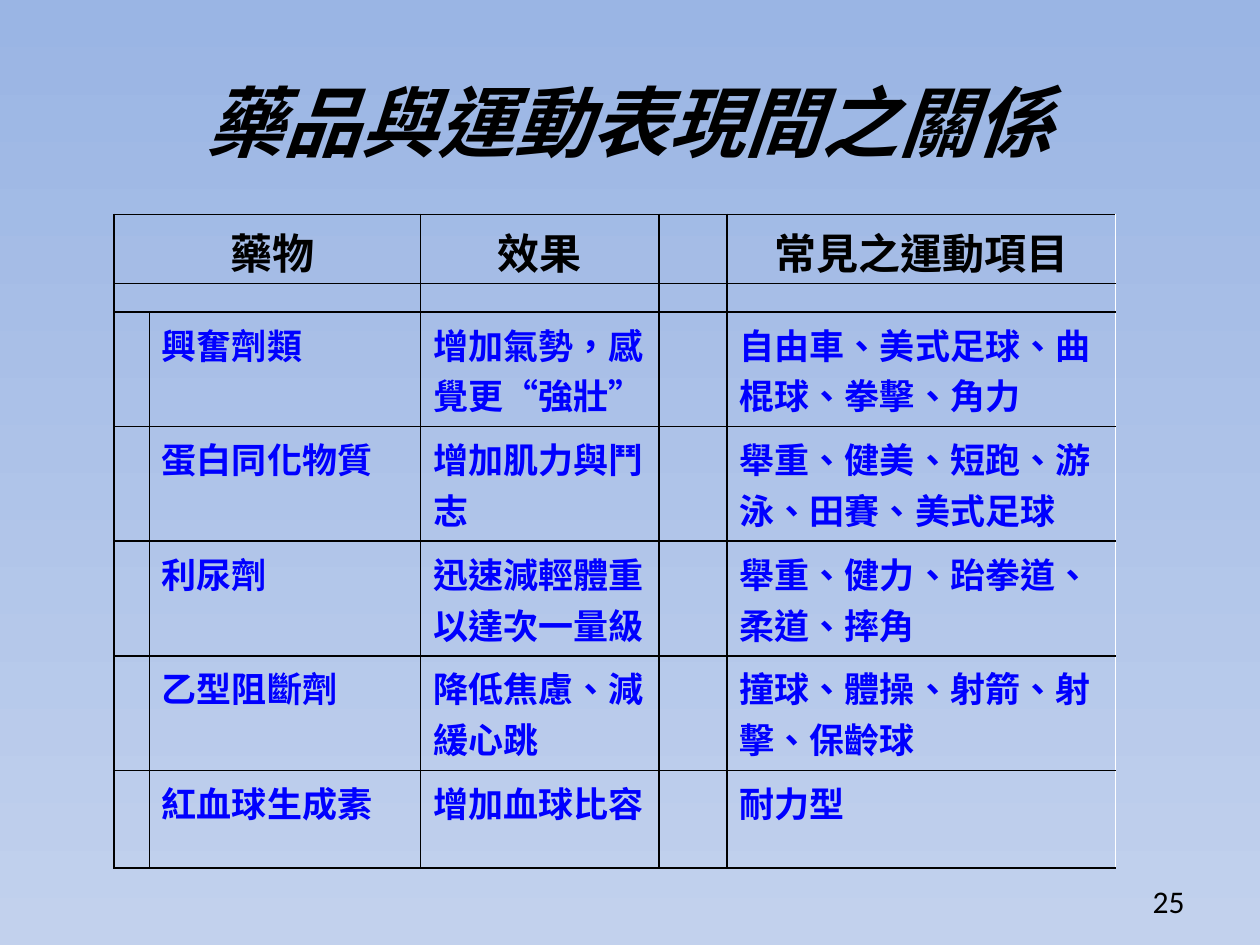
import pptx
import pptx.util
import pptx.dml.color
import pptx.enum.lang
import pptx.enum.shapes
import pptx.enum.text
import pptx.oxml
import pptx.oxml.ns

Cm = pptx.util.Cm
Pt = pptx.util.Pt
RGBColor = pptx.dml.color.RGBColor
ALIGN = pptx.enum.text.PP_ALIGN
ANCHOR = pptx.enum.text.MSO_ANCHOR

BLACK = RGBColor(0x00, 0x00, 0x00)
WHITE = RGBColor(0xFF, 0xFF, 0xFF)
BLUE = RGBColor(0x00, 0x00, 0xFF)
SKY_TOP = RGBColor(0x9A, 0xB5, 0xE4)
SKY_BOTTOM = RGBColor(0xC2, 0xD1, 0xED)
CJK_FONT = "Noto Sans CJK SC"

TABLE_LEFT, TABLE_TOP = 2.3, 4.32
ONE_LINE_ROW, TWO_LINE_ROW = 1.97, 2.31
ROW_HEIGHTS = [ONE_LINE_ROW] + [TWO_LINE_ROW] * 4 + [ONE_LINE_ROW]
COLUMN_WIDTHS = [0.71, 5.47, 4.81, 1.37, 7.83]
DRUG, EFFECT, SPORTS = 1, 2, 4
HEADINGS = [" 藥物", "效果", "常見之運動項目"]
DRUG_ROWS = [
    ("興奮劑類", "增加氣勢，感覺更“強壯”", "自由車、美式足球、曲棍球、拳擊、角力"),
    ("蛋白同化物質", "增加肌力與鬥志", "舉重、健美、短跑、游泳、田賽、美式足球"),
    ("利尿劑", "迅速減輕體重以達次一量級", "舉重、健力、跆拳道、柔道、摔角"),
    ("乙型阻斷劑", "降低焦慮、減緩心跳", "撞球、體操、射箭、射擊、保齡球"),
    ("紅血球生成素", "增加血球比容", "耐力型"),
]


def write_text(frame, text, size=20, font=CJK_FONT, color=BLACK, bold=False,
               italic=False, align=ALIGN.LEFT):
    paragraph = frame.paragraphs[0]
    paragraph.alignment = align
    run = paragraph.add_run()
    run.text = text
    run.font.size = Pt(size)
    run.font.name = font
    run.font.bold = bold
    run.font.italic = italic
    run.font.color.rgb = color
    run.font.language_id = pptx.enum.lang.MSO_LANGUAGE_ID.TRADITIONAL_CHINESE
    latin = run.font._element.find(pptx.oxml.ns.qn("a:latin"))
    latin.addnext(pptx.oxml.parse_xml(
        f'<a:ea {pptx.oxml.ns.nsdecls("a")} typeface="{CJK_FONT}"/>'))


def add_label(slide, left, top, width, height, text, anchor, **text_format):
    frame = slide.shapes.add_textbox(
        Cm(left), Cm(top), Cm(width), Cm(height)).text_frame
    frame.word_wrap = True
    frame.vertical_anchor = anchor
    write_text(frame, text, **text_format)


def set_borders(cell, right_color):
    properties = cell._tc.get_or_add_tcPr()
    colors = {"lnL": BLACK, "lnR": right_color, "lnT": BLACK, "lnB": BLACK}
    for position, (side, color) in enumerate(colors.items()):
        properties.insert(position, pptx.oxml.parse_xml(
            f'<a:{side} {pptx.oxml.ns.nsdecls("a")} w="12700"><a:solidFill>'
            f'<a:srgbClr val="{color}"/></a:solidFill></a:{side}>'))


def add_drug_table(slide):
    table = slide.shapes.add_table(
        len(ROW_HEIGHTS), len(COLUMN_WIDTHS), Cm(TABLE_LEFT), Cm(TABLE_TOP),
        Cm(sum(COLUMN_WIDTHS)), Cm(sum(ROW_HEIGHTS))).table
    table.first_row = False
    table.horz_banding = False
    for column, width in zip(table.columns, COLUMN_WIDTHS):
        column.width = Cm(width)
    for row, height in zip(table.rows, ROW_HEIGHTS):
        row.height = Cm(height)
        for index, cell in enumerate(row.cells):
            cell.fill.background()
            set_borders(cell, WHITE if index == SPORTS else BLACK)
    table.cell(0, 0).merge(table.cell(0, DRUG))
    for column, heading in zip((0, EFFECT, SPORTS), HEADINGS):
        write_text(table.cell(0, column).text_frame, heading, size=24,
                   bold=True, align=ALIGN.CENTER)
    for row, entries in enumerate(DRUG_ROWS, start=1):
        for column, entry in zip((DRUG, EFFECT, SPORTS), entries):
            write_text(table.cell(row, column).text_frame, entry,
                       color=BLUE, bold=True)


def add_heading_rule(slide):
    right = TABLE_LEFT + sum(COLUMN_WIDTHS)
    rule = slide.shapes.add_connector(
        pptx.enum.shapes.MSO_CONNECTOR.STRAIGHT,
        Cm(TABLE_LEFT), Cm(5.72), Cm(right), Cm(5.72))
    rule.line.color.rgb = BLACK
    rule.line.width = Pt(0.75)
    rule._element.spPr.append(pptx.oxml.parse_xml(
        f'<a:effectLst {pptx.oxml.ns.nsdecls("a")}/>'))


def paint_background(slide):
    fill = slide.background.fill
    fill.gradient()
    fill.gradient_angle = 270
    for stop, color, position in zip(
            fill.gradient_stops, (SKY_TOP, SKY_BOTTOM), (0, 1)):
        stop.color.rgb = color
        stop.position = position


def main():
    deck = pptx.Presentation()
    deck.slide_width, deck.slide_height = Cm(25.4), Cm(19.05)
    slide = deck.slides.add_slide(deck.slide_layouts[6])
    paint_background(slide)
    add_label(slide, 18.21, 17.65, 5.92, 1.02, "25", ANCHOR.MIDDLE,
              size=18, font="Calibri", align=ALIGN.RIGHT)
    add_drug_table(slide)
    add_label(slide, 0, 1.35, 25.4, 2.13, "藥品與運動表現間之關係",
              ANCHOR.BOTTOM, size=44, font="Times New Roman", bold=True,
              italic=True, align=ALIGN.CENTER)
    add_heading_rule(slide)
    deck.save("out.pptx")


if __name__ == "__main__":
    main()
